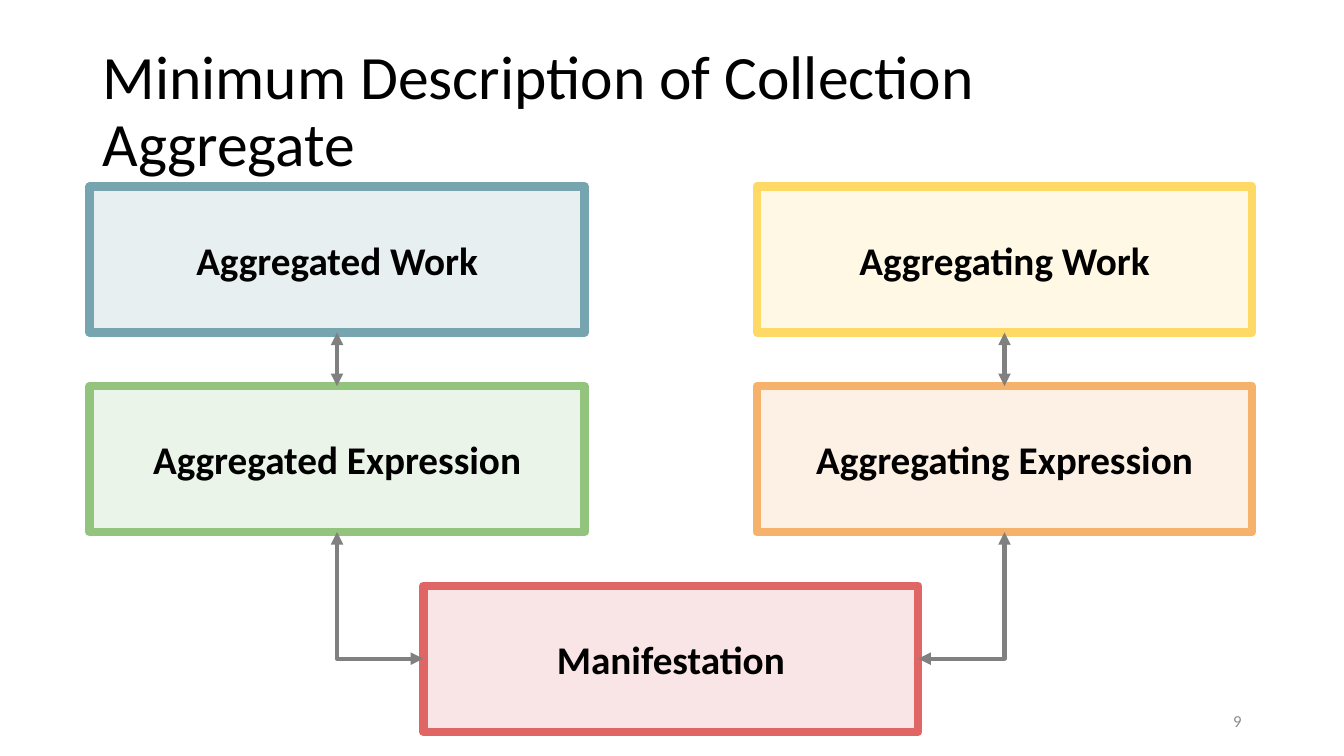
from dataclasses import dataclass

from lxml import etree
from pptx import Presentation
from pptx import util as u
from pptx.dml.color import RGBColor
from pptx.enum import shapes, text
from pptx.oxml import ns


@dataclass(frozen=True)
class Theme:
    font: str = "Calibri"
    ink: str = "000000"
    page: str = "8C8C8C"
    arrow: str = "808080"
    blue: tuple = ("D0E0E3", "76A5AF")
    gold: tuple = ("FFF2CC", "FFD966")
    green: tuple = ("D9EAD3", "93C47D")
    amber: tuple = ("FCE5CD", "F6B26B")
    red: tuple = ("F4CCCC", "E06666")
    head: int = 44
    label: int = 28
    small: int = 12
    frame: int = 6
    link: int = 3


THEME = Theme()

# Box grid in centimetres: three columns, three rows
LEFT, TOP = 2.26, 4.7
WIDE, HIGH = 12.47, 3.68
STEP_X, STEP_Y = 8.41, 5.03


def apply(item, values):
    for name, value in values.items():
        setattr(item, name, value)


def place(shape, left, top, wide, high):
    apply(shape, {"left": u.Cm(left), "top": u.Cm(top),
                  "width": u.Cm(wide), "height": u.Cm(high)})


def write(shape, words, size, align, color=THEME.ink, bold=False):
    frame = shape.text_frame
    apply(frame, {"text": words, "word_wrap": True,
                  "auto_size": text.MSO_AUTO_SIZE.NONE,
                  "vertical_anchor": text.MSO_ANCHOR.MIDDLE})
    line = frame.paragraphs[0]
    line.alignment = align
    font = line.runs[0].font
    apply(font, {"name": THEME.font, "size": u.Pt(size), "bold": bold})
    font.color.rgb = RGBColor.from_string(color)


def stroke(line, color, width):
    line.color.rgb = RGBColor.from_string(color)
    line.width = u.Pt(width)


def add_box(slide, words, col, row, colors):
    fill, edge = colors
    box = slide.shapes.add_shape(shapes.MSO_SHAPE.RECTANGLE, 0, 0, 0, 0)
    place(box, LEFT + col * STEP_X, TOP + row * STEP_Y, WIDE, HIGH)
    box.shadow.inherit = False
    box.fill.solid()
    box.fill.fore_color.rgb = RGBColor.from_string(fill)
    # Half-transparent fill
    tint = box.fill._xPr.find(".//" + ns.qn("a:srgbClr"))
    etree.SubElement(tint, ns.qn("a:alpha"), val="50000")
    stroke(box.line, edge, THEME.frame)
    write(box, words, THEME.label, text.PP_ALIGN.CENTER, bold=True)
    return box


def add_link(slide, start, site, end, goal, bent=False):
    kind = shapes.MSO_CONNECTOR.ELBOW if bent else shapes.MSO_CONNECTOR.STRAIGHT
    link = slide.shapes.add_connector(kind, 0, 0, 0, 0)
    link.begin_connect(start, site)
    link.end_connect(end, goal)
    stroke(link.line, THEME.arrow, THEME.link)
    props = link._element.spPr
    if bent:
        # One corner only
        props.find(ns.qn("a:prstGeom")).set("prst", "bentConnector2")
    edge = props.find(ns.qn("a:ln"))
    for tip in ("a:headEnd", "a:tailEnd"):
        etree.SubElement(edge, ns.qn(tip), type="triangle")
    etree.SubElement(props, ns.qn("a:effectLst"))


def main():
    deck = Presentation()
    apply(deck, {"slide_width": u.Cm(33.87), "slide_height": u.Cm(19.05)})
    slide = deck.slides.add_slide(deck.slide_layouts[5])

    # Title
    title = slide.shapes.title
    place(title, 2.33, 1.01, 29.21, 3.68)
    write(title, "Minimum Description of Collection Aggregate",
          THEME.head, text.PP_ALIGN.LEFT)
    title.text_frame.paragraphs[0].line_spacing = 0.9

    # Page number
    page = slide.shapes.add_textbox(0, 0, 0, 0)
    place(page, 23.92, 17.66, 7.62, 1.01)
    write(page, "9", THEME.small, text.PP_ALIGN.RIGHT, THEME.page)

    # Works, expressions and the shared manifestation
    sides = [("Aggregated", 0, THEME.blue, THEME.green),
             ("Aggregating", 2, THEME.gold, THEME.amber)]
    pairs = [(add_box(slide, f"{name} Work", col, 0, work),
              add_box(slide, f"{name} Expression", col, 1, expr))
             for name, col, work, expr in sides]
    base = add_box(slide, "Manifestation", 1, 2, THEME.red)

    # Arrows; sites run 0 top, 1 left, 2 bottom, 3 right
    for (work, expr), side in zip(pairs, (1, 3)):
        add_link(slide, base, side, expr, 2, bent=True)
        add_link(slide, work, 2, expr, 0)

    deck.save("out.pptx")


if __name__ == "__main__":
    main()
